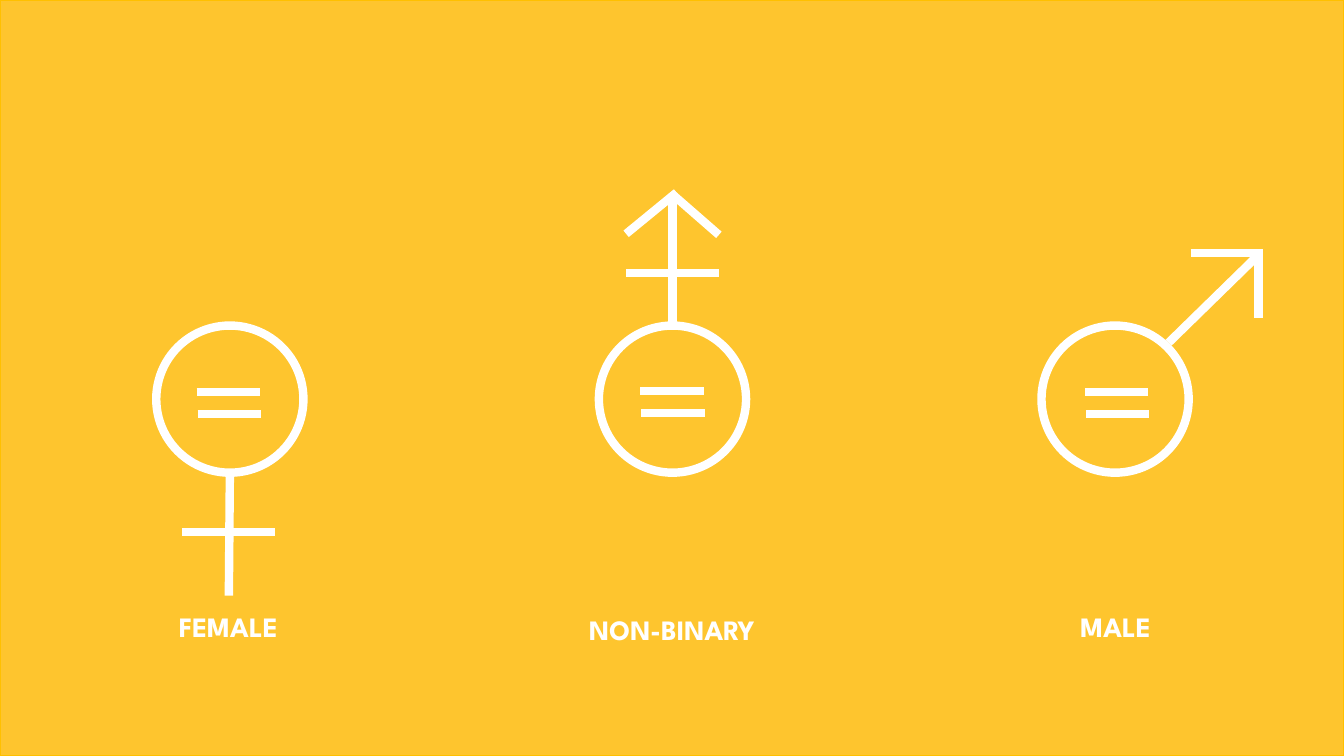
from dataclasses import dataclass

from lxml import etree
from pptx import Presentation
from pptx import util as u
from pptx.dml.color import RGBColor
from pptx.enum import shapes, text
from pptx.oxml.ns import qn

PX = 9144  # EMU in one px, at 100 px to the inch
WIDTH, HEIGHT = 1333, 750


@dataclass(frozen=True)
class Theme:
    yellow: RGBColor = RGBColor(0xFE, 0xC5, 0x2E)
    edge: RGBColor = RGBColor(0xFF, 0xC0, 0x00)
    white: RGBColor = RGBColor(0xFF, 0xFF, 0xFF)
    font: str = "League Spartan"
    label_size: int = 20
    stroke: int = 6
    edge_stroke: int = 1


class Canvas:
    """Draws on one page in one theme, with lengths in px."""

    def __init__(self, page, theme):
        self.page = page
        self.theme = theme

    def outline(self, item, color, width):
        item.line.color.rgb = color
        item.line.width = u.Pt(width)

    def background(self):
        box = self.page.shapes.add_shape(
            shapes.MSO_SHAPE.RECTANGLE, 0, 0, WIDTH * PX, HEIGHT * PX)
        box.shadow.inherit = False
        box.fill.solid()
        box.fill.fore_color.rgb = self.theme.yellow
        self.outline(box, self.theme.edge, self.theme.edge_stroke)

    def ring(self, left, top, size):
        ring = self.page.shapes.add_shape(
            shapes.MSO_SHAPE.OVAL, left * PX, top * PX, size * PX, size * PX)
        ring.shadow.inherit = False
        ring.fill.background()
        self.outline(ring, self.theme.white, self.theme.stroke)
        return ring

    def line(self, x1, y1, x2, y2):
        line = self.page.shapes.add_connector(
            shapes.MSO_CONNECTOR.STRAIGHT, x1 * PX, y1 * PX, x2 * PX, y2 * PX)
        self.outline(line, self.theme.white, self.theme.stroke)
        etree.SubElement(line._element.spPr, qn("a:effectLst"))
        return line

    def label(self, words, left, top, width, height=44):
        box = self.page.shapes.add_textbox(
            left * PX, top * PX, width * PX, height * PX)
        frame = box.text_frame
        frame.word_wrap = True
        frame.auto_size = text.MSO_AUTO_SIZE.SHAPE_TO_FIT_TEXT
        para = frame.paragraphs[0]
        para.text = words
        para.alignment = text.PP_ALIGN.CENTER
        para.font.name = self.theme.font
        para.font.size = u.Pt(self.theme.label_size)
        para.font.bold = True
        para.font.color.rgb = self.theme.white

    def equals(self, left, top, length=63, gap=22):
        self.line(left, top, left + length, top)
        self.line(left + 1, top + gap, left + 1 + length, top + gap)


RING_LEFT, RING_TOP, RING_SIZE, RING_PITCH = 155, 323, 146, 439


def female(canvas):
    canvas.line(227, 591, 228, RING_TOP + RING_SIZE)
    canvas.line(181, 528, 273, 528)


def non_binary(canvas, ring):
    stem = canvas.line(667, 195, 667, RING_TOP)
    stem.end_connect(ring, 0)
    canvas.line(621, 271, 713, 271)
    canvas.line(671, 191, 621, 232)
    canvas.line(666, 192, 713, 233)


def male(canvas):
    canvas.line(1159, 340, 1248, 253)
    canvas.line(1181, 251, 1250, 251)
    canvas.line(1248, 247, 1248, 315)


def main():
    deck = Presentation()
    deck.slide_width, deck.slide_height = WIDTH * PX, HEIGHT * PX
    canvas = Canvas(deck.slides.add_slide(deck.slide_layouts[6]), Theme())
    canvas.background()

    # words, label left, top and width, equals left and top
    signs = [
        ("FEMALE", 163, 600, 127, 195, 389),
        ("NON-BINARY", 569, 603, 195, 635, 388),
        ("MALE", 1043, 600, 127, 1076, 389),
    ]
    rings = []
    for index, (words, left, top, width, bar_left, bar_top) in enumerate(signs):
        rings.append(canvas.ring(
            RING_LEFT + index * RING_PITCH, RING_TOP, RING_SIZE))
        canvas.equals(bar_left, bar_top)
        canvas.label(words, left, top, width)

    female(canvas)
    non_binary(canvas, rings[1])
    male(canvas)
    deck.save("out.pptx")


if __name__ == "__main__":
    main()
